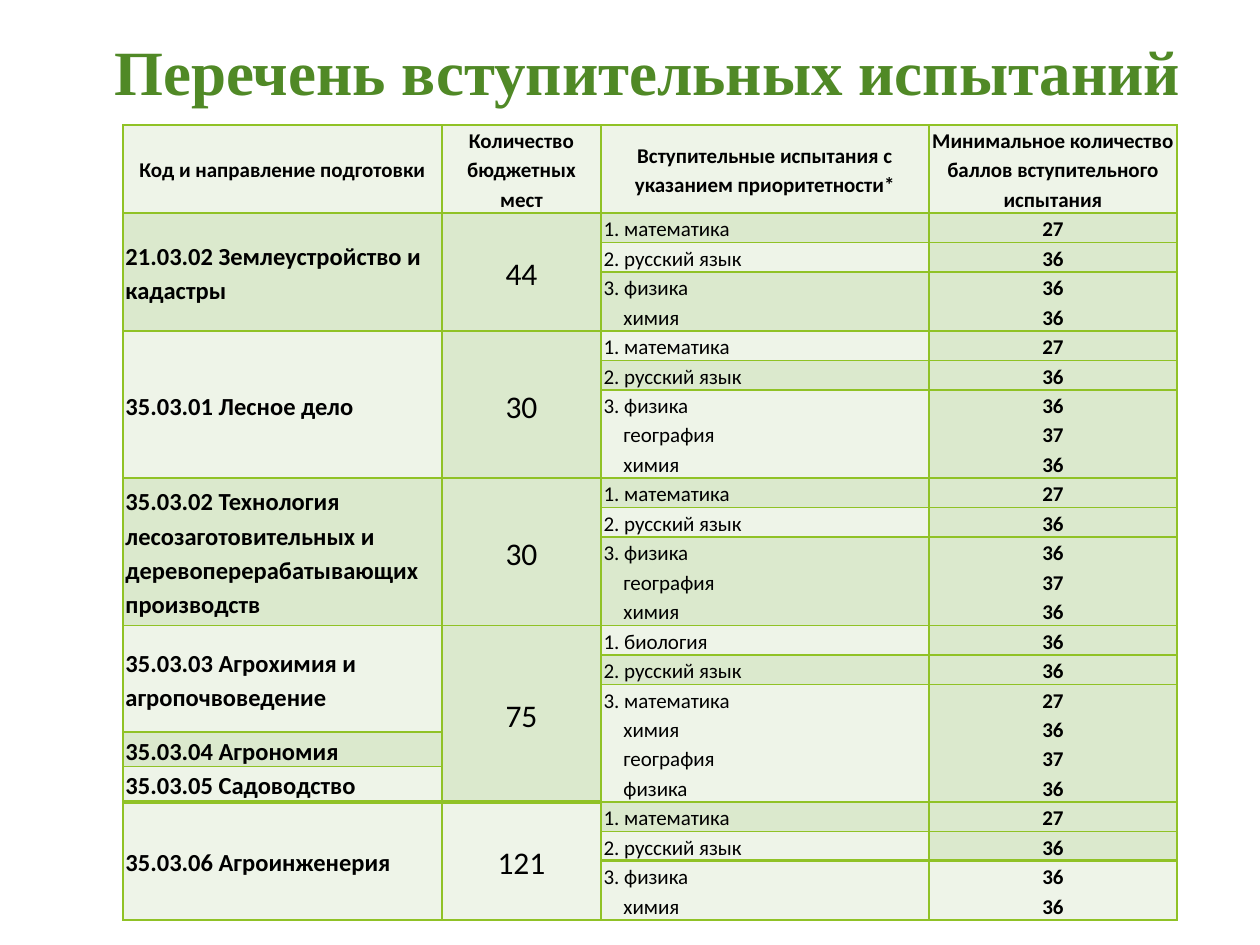
from dataclasses import dataclass

from lxml import etree
from pptx import Presentation
from pptx.dml.color import RGBColor
from pptx.enum.text import MSO_ANCHOR, MSO_AUTO_SIZE, PP_ALIGN
from pptx.oxml import ns
from pptx.util import Pt


@dataclass(frozen=True)
class Theme:
    title: str = "508926"
    ink: str = "000000"
    border: str = "90C226"
    light: str = "EEF4E8"
    dark: str = "DBE9CD"
    title_font: str = "Times New Roman"
    body_font: str = "Calibri"
    title_size: int = 36
    body_size: int = 12
    name_size: int = 14
    seats_size: int = 18


THEME = Theme()
LINE = 16.57  # height of one line of exam text
NAME_LINE = 19.43
COLUMNS = (182.4, 90.8, 187.4, 141.8)
HEADERS = (
    "Код и направление подготовки",
    "Количество бюджетных мест",
    "Вступительные испытания с указанием приоритетности*",
    "Минимальное количество баллов вступительного испытания",
)
RUSSIAN = ("русский язык", 36)
MATHS = ("математика", 27)
PHYSICS, CHEMISTRY = ("физика", 36), ("химия", 36)
GEOGRAPHY, BIOLOGY = ("география", 37), ("биология", 36)

# Programme names, places, first exam, choices for the third exam
PROGRAMMES = (
    (["21.03.02 Землеустройство и кадастры"], 44, MATHS, [PHYSICS, CHEMISTRY]),
    (["35.03.01 Лесное дело"], 30, MATHS, [PHYSICS, GEOGRAPHY, CHEMISTRY]),
    (["35.03.02 Технология лесозаготовительных и деревоперерабатывающих производств"],
     30, MATHS, [PHYSICS, GEOGRAPHY, CHEMISTRY]),
    (["35.03.03 Агрохимия и агропочвоведение", "35.03.04 Агрономия",
      "35.03.05 Садоводство"], 75, BIOLOGY, [MATHS, CHEMISTRY, GEOGRAPHY, PHYSICS]),
    (["35.03.06 Агроинженерия"], 121, MATHS, [PHYSICS, CHEMISTRY]),
)


def write(tf, lines, size=THEME.body_size, font=THEME.body_font, color=THEME.ink,
          bold=False, align=PP_ALIGN.LEFT, spacing=1.15, indent=0):
    """Write one paragraph per line; indent applies after the first."""
    for i, line in enumerate(lines):
        p = tf.add_paragraph() if i else tf.paragraphs[0]
        p.alignment, p.line_spacing = align, spacing
        if i and indent:
            p._p.get_or_add_pPr().set("marL", str(Pt(indent)))
        r = p.add_run()
        r.text = line
        r.font.size, r.font.name, r.font.bold = Pt(size), font, bold
        r.font.color.rgb = RGBColor.from_string(color)


def set_border(cell, **widths):
    """Draw the named sides (L, R, T, B) at the given widths."""
    tc_pr = cell._tc.get_or_add_tcPr()
    for i, side in enumerate("LRTB"):
        if side not in widths:
            continue
        tag = ns.qn(f"a:ln{side}")
        for old in tc_pr.findall(tag):
            tc_pr.remove(old)
        ln = etree.Element(tag, w=str(Pt(widths[side])))
        fill = etree.SubElement(ln, ns.qn("a:solidFill"))
        etree.SubElement(fill, ns.qn("a:srgbClr"), val=THEME.border)
        tc_pr.insert(i, ln)


def fill_cell(cell, color):
    cell.fill.solid()
    cell.fill.fore_color.rgb = RGBColor.from_string(color)


def thicken_top(table, row, columns):
    for c in columns:
        set_border(table.cell(row, c), T=2)
        set_border(table.cell(row - 1, c), B=2)


def add_title(s, x, y, w, h):
    title = s.shapes.title
    title.left, title.top, title.width, title.height = map(Pt, (x, y, w, h))
    tf = title.text_frame
    tf.word_wrap, tf.auto_size = False, MSO_AUTO_SIZE.NONE
    tf.vertical_anchor = MSO_ANCHOR.TOP
    write(tf, ["Перечень вступительных испытаний"], size=THEME.title_size,
          font=THEME.title_font, color=THEME.title, bold=True, spacing=1.0)


def row_heights():
    heights = [3 * LINE]
    for names, _, _, choices in PROGRAMMES:
        extra = len(names) - 1
        heights += [LINE, LINE, len(choices) * LINE - extra * NAME_LINE]
        heights += [NAME_LINE] * extra
    return heights


def add_programme(table, top, names, seats, first, choices):
    """Fill the rows of one programme group and return the next free row."""
    bottom = top + 1 + len(names)
    table.cell(top, 0).merge(table.cell(top + 2, 0))
    table.cell(top, 1).merge(table.cell(bottom, 1))
    if bottom > top + 2:
        for c in (2, 3):
            table.cell(top + 2, c).merge(table.cell(bottom, c))
    for row, name in zip([top, *range(top + 3, bottom + 1)], names):
        write(table.cell(row, 0).text_frame, [name], size=THEME.name_size, bold=True)
    write(table.cell(top, 1).text_frame, [str(seats)], size=THEME.seats_size,
          align=PP_ALIGN.CENTER)
    for i, exams in enumerate(([first], [RUSSIAN], choices)):
        subjects = [subject for subject, _ in exams]
        subjects[0] = f"{i + 1}. {subjects[0]}"
        write(table.cell(top + i, 2).text_frame, subjects, indent=11.4)
        write(table.cell(top + i, 3).text_frame, [str(score) for _, score in exams],
              bold=True, align=PP_ALIGN.CENTER)
    return bottom + 1


def add_exam_table(s, x, y):
    heights = row_heights()
    table = s.shapes.add_table(len(heights), len(COLUMNS), Pt(x), Pt(y),
                               Pt(sum(COLUMNS)), Pt(sum(heights))).table
    table.first_row = table.horz_banding = False
    for column, width in zip(table.columns, COLUMNS):
        column.width = Pt(width)
    for r, height in enumerate(heights):
        table.rows[r].height = Pt(height)
        for c in range(len(COLUMNS)):
            cell = table.cell(r, c)
            cell.margin_left = cell.margin_right = Pt(1.5)
            cell.margin_top = cell.margin_bottom = 0
            centred = r == 0 or c < 2
            cell.vertical_anchor = MSO_ANCHOR.MIDDLE if centred else MSO_ANCHOR.TOP
            banded_light = r % 2 == 0 and c in (0, 2)
            fill_cell(cell, THEME.light if r == 0 or banded_light else THEME.dark)
            set_border(cell, L=1, R=1, T=1, B=1)
    for c, header in enumerate(HEADERS):
        write(table.cell(0, c).text_frame, [header], bold=True, align=PP_ALIGN.CENTER)
    row = 1
    for programme in PROGRAMMES:
        row = add_programme(table, row, *programme)

    last = row - 1
    for r, c in ((last - 2, 0), (last - 2, 1), (last, 2), (last, 3)):
        fill_cell(table.cell(r, c), THEME.light)
    thicken_top(table, last - 2, (0, 1))
    thicken_top(table, last, (2, 3))


def main():
    prs = Presentation()
    prs.slide_width, prs.slide_height = Pt(720), Pt(540)
    s = prs.slides.add_slide(prs.slide_layouts[5])
    add_title(s, 58.3, 15.1, 626.4, 51.1)
    add_exam_table(s, 70.2, 71.3)
    prs.save("out.pptx")


if __name__ == "__main__":
    main()
